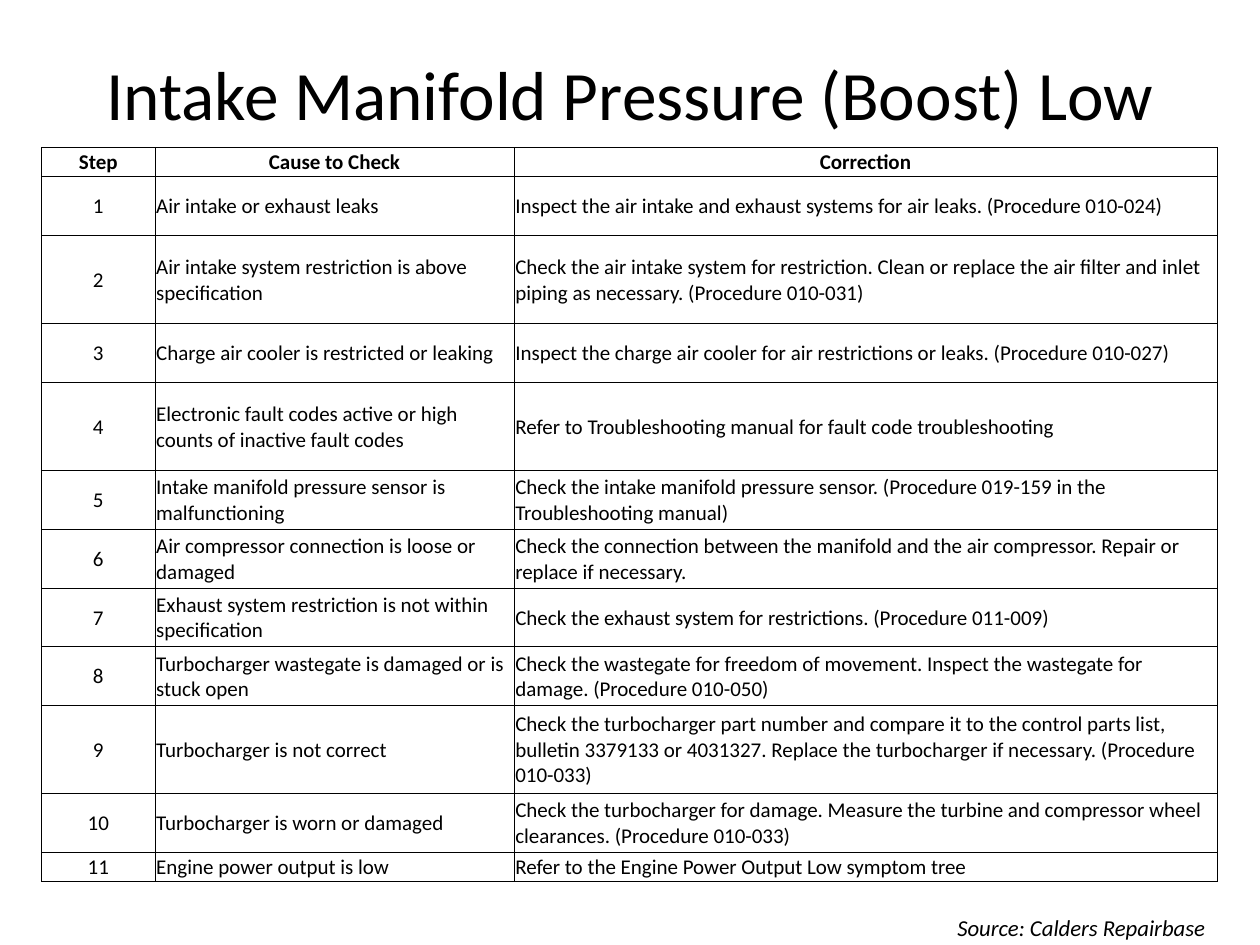
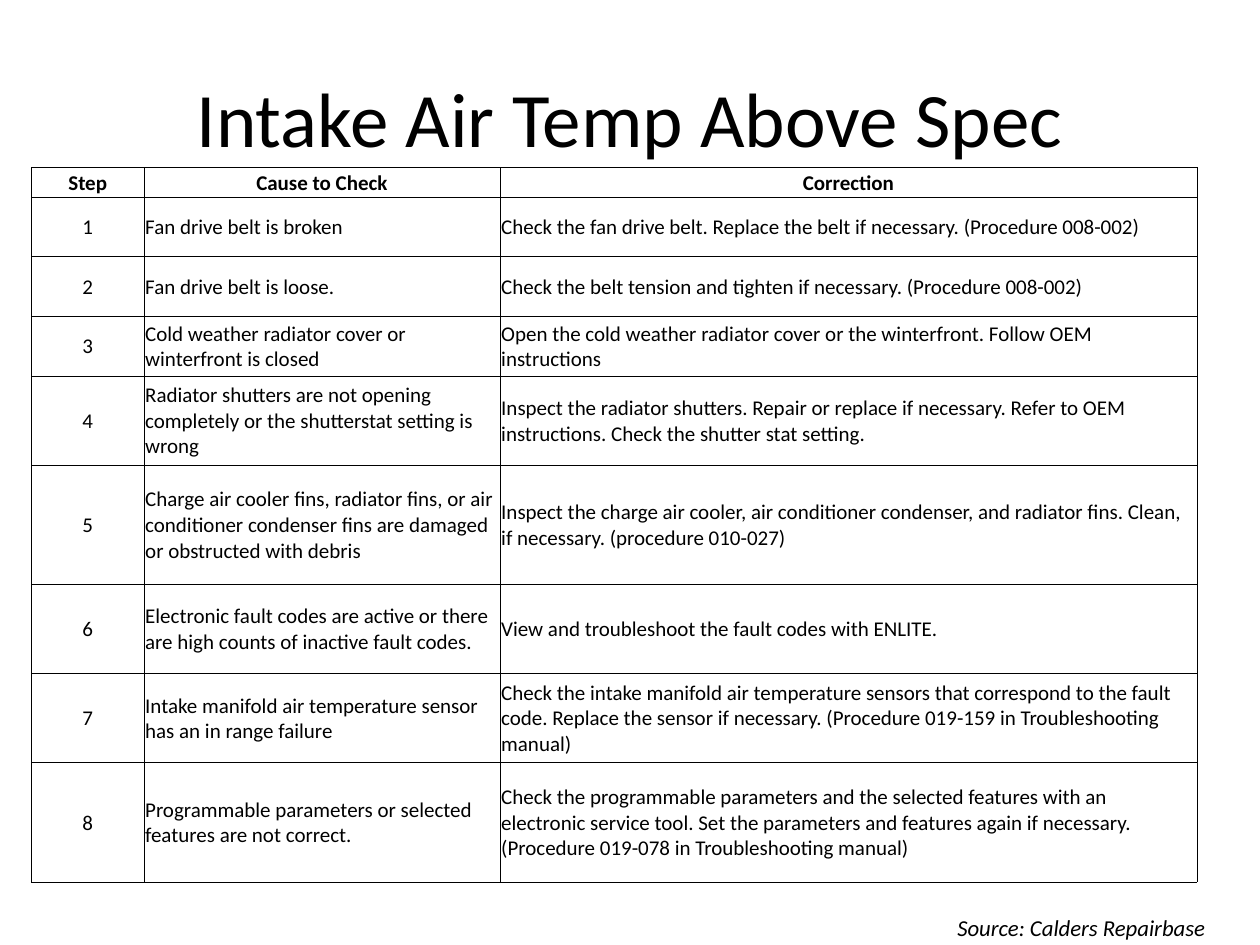
from dataclasses import dataclass

import lxml.etree
import pptx
import pptx.dml.color
import pptx.enum.text
import pptx.oxml.ns
import pptx.util

# Shared look
WIDE, HIGH = 10, 7.5
FONT, INK = "Calibri", "000000"
SIDE = 0.05 * WIDE
TOP = 0.04 * HIGH
FLOOR = 7.0  # all tables end here
SPLIT = (0.0965, 0.3055, 0.598)  # column shares of the table width
HEADS = ("Step", "Cause to Check", "Correction")
SOURCE = "Source: Calders Repairbase"
ALIGN = pptx.enum.text.PP_ALIGN
MIDDLE = pptx.enum.text.MSO_ANCHOR.MIDDLE
FIT = pptx.enum.text.MSO_AUTO_SIZE


@dataclass(frozen=True)
class Check:
    units: int  # row height, in header rows
    cause: str
    action: str


@dataclass(frozen=True)
class Page:
    title: str
    size: float
    depth: float  # height of the title area
    left: float
    top: float
    width: float
    checks: tuple[Check, ...]


# Content
PAGES = (
    Page("Intake Manifold Pressure (Boost) Low", 39.6, 0.87, 0.33, 1.17, 9.33, (
        Check(2, "Air intake or exhaust leaks",
              "Inspect the air intake and exhaust systems for air leaks. (Procedure 010-024)"),
        Check(3, "Air intake system restriction is above specification",
              "Check the air intake system for restriction. Clean or replace the air filter "
              "and inlet piping as necessary. (Procedure 010-031)"),
        Check(2, "Charge air cooler is restricted or leaking",
              "Inspect the charge air cooler for air restrictions or leaks. (Procedure 010-027)"),
        Check(3, "Electronic fault codes active or high counts of inactive fault codes",
              "Refer to Troubleshooting manual for fault code troubleshooting"),
        Check(2, "Intake manifold pressure sensor is malfunctioning",
              "Check the intake manifold pressure sensor. (Procedure 019-159 in the "
              "Troubleshooting manual)"),
        Check(2, "Air compressor connection is loose or damaged",
              "Check the connection between the manifold and the air compressor. Repair or "
              "replace if necessary."),
        Check(2, "Exhaust system restriction is not within specification",
              "Check the exhaust system for restrictions. (Procedure 011-009)"),
        Check(2, "Turbocharger wastegate is damaged or is stuck open",
              "Check the wastegate for freedom of movement. Inspect the wastegate for damage. "
              "(Procedure 010-050)"),
        Check(3, "Turbocharger is not correct",
              "Check the turbocharger part number and compare it to the control parts list, "
              "bulletin 3379133 or 4031327. Replace the turbocharger if necessary. "
              "(Procedure 010-033)"),
        Check(2, "Turbocharger is worn or damaged",
              "Check the turbocharger for damage. Measure the turbine and compressor wheel "
              "clearances. (Procedure 010-033)"),
        Check(1, "Engine power output is low",
              "Refer to the Engine Power Output Low symptom tree"),
    )),
    Page("Intake Air Temp Above Spec", 44, 1.25, 0.25, 1.33, 9.25, (
        Check(2, "Fan drive belt is broken",
              "Check the fan drive belt. Replace the belt if necessary. (Procedure 008-002)"),
        Check(2, "Fan drive belt is loose.",
              "Check the belt tension and tighten if necessary. (Procedure 008-002)"),
        Check(2, "Cold weather radiator cover or winterfront is closed",
              "Open the cold weather radiator cover or the winterfront. Follow OEM instructions"),
        Check(3, "Radiator shutters are not opening completely or the shutterstat setting is wrong",
              "Inspect the radiator shutters. Repair or replace if necessary. Refer to OEM "
              "instructions. Check the shutter stat setting."),
        Check(4, "Charge air cooler fins, radiator fins, or air conditioner condenser fins are "
              "damaged or obstructed with debris",
              "Inspect the charge air cooler, air conditioner condenser, and radiator fins. "
              "Clean, if necessary. (procedure 010-027)"),
        Check(3, "Electronic fault codes are active or there are high counts of inactive fault codes.",
              "View and troubleshoot the fault codes with ENLITE."),
        Check(3, "Intake manifold air temperature sensor has an in range failure",
              "Check the intake manifold air temperature sensors that correspond to the fault "
              "code. Replace the sensor if necessary. (Procedure 019-159 in Troubleshooting manual)"),
        Check(4, "Programmable parameters or selected features are not correct.",
              "Check the programmable parameters and the selected features with an electronic "
              "service tool. Set the parameters and features again if necessary. "
              "(Procedure 019-078 in Troubleshooting manual)"),
    )),
)


# Helpers
def inch(*sizes: float) -> list[int]:
    return [pptx.util.Inches(size) for size in sizes]


def paint(target, tone: str) -> None:
    target.rgb = pptx.dml.color.RGBColor.from_string(tone)


def write(frame, text: str, *, size: float = 12, bold: bool = False,
          slant: bool = False, align=ALIGN.LEFT) -> None:
    line = frame.paragraphs[0]
    line.alignment = align
    run = line.add_run()
    run.text = text
    run.font.name, run.font.size = FONT, pptx.util.Pt(size)
    run.font.bold, run.font.italic = bold, slant
    paint(run.font.color, INK)


def frame_cell(cell) -> None:
    """Rule all four sides and clear the fill."""
    props = cell._tc.get_or_add_tcPr()
    name = pptx.oxml.ns.qn
    for side in "LRTB":
        edge = lxml.etree.SubElement(props, name(f"a:ln{side}"), w=str(pptx.util.Pt(0.5)))
        fill = lxml.etree.SubElement(edge, name("a:solidFill"))
        lxml.etree.SubElement(fill, name("a:srgbClr"), val=INK)
    cell.fill.background()


# Slide parts
def add_title(slide, page: Page) -> None:
    title = slide.shapes.title
    title.left, title.top, title.width, title.height = inch(
        SIDE, TOP, WIDE - 2 * SIDE, page.depth)
    title.text_frame.auto_size = FIT.NONE
    title.text_frame.vertical_anchor = MIDDLE
    write(title.text_frame, page.title, size=page.size, align=ALIGN.CENTER)


def add_source(slide) -> None:
    box = slide.shapes.add_textbox(*inch(0.75 * WIDE, 0.96 * HIGH, 0.25 * WIDE, 0.32))
    box.text_frame.word_wrap = True
    box.text_frame.auto_size = FIT.SHAPE_TO_FIT_TEXT
    write(box.text_frame, SOURCE, size=13, slant=True)


def add_checks(slide, page: Page) -> None:
    rows = [HEADS] + [(str(step), check.cause, check.action)
                      for step, check in enumerate(page.checks, 1)]
    units = [1] + [check.units for check in page.checks]
    high = FLOOR - page.top
    table = slide.shapes.add_table(
        len(rows), len(HEADS), *inch(page.left, page.top, page.width, high)).table
    table.first_row = table.horz_banding = False
    for col, share in zip(table.columns, SPLIT):
        col.width = pptx.util.Inches(page.width * share)
    for row, unit in zip(table.rows, units):
        row.height = pptx.util.Inches(high * unit / sum(units))

    for r, texts in enumerate(rows):
        for c, text in enumerate(texts):
            cell = table.cell(r, c)
            cell.margin_left, cell.margin_right, cell.margin_top, cell.margin_bottom = inch(
                0.01, 0.01, 0.01, 0)
            cell.vertical_anchor = MIDDLE
            frame_cell(cell)
            mid = r == 0 or c == 0
            write(cell.text_frame, text, bold=r == 0,
                  align=ALIGN.CENTER if mid else ALIGN.LEFT)


def main() -> None:
    deck = pptx.Presentation()
    deck.slide_width, deck.slide_height = inch(WIDE, HIGH)
    plain = deck.slide_layouts.get_by_name("Title Only")
    for page in PAGES:
        slide = deck.slides.add_slide(plain)
        add_title(slide, page)
        add_source(slide)
        add_checks(slide, page)
    deck.save("out.pptx")


if __name__ == "__main__":
    main()
